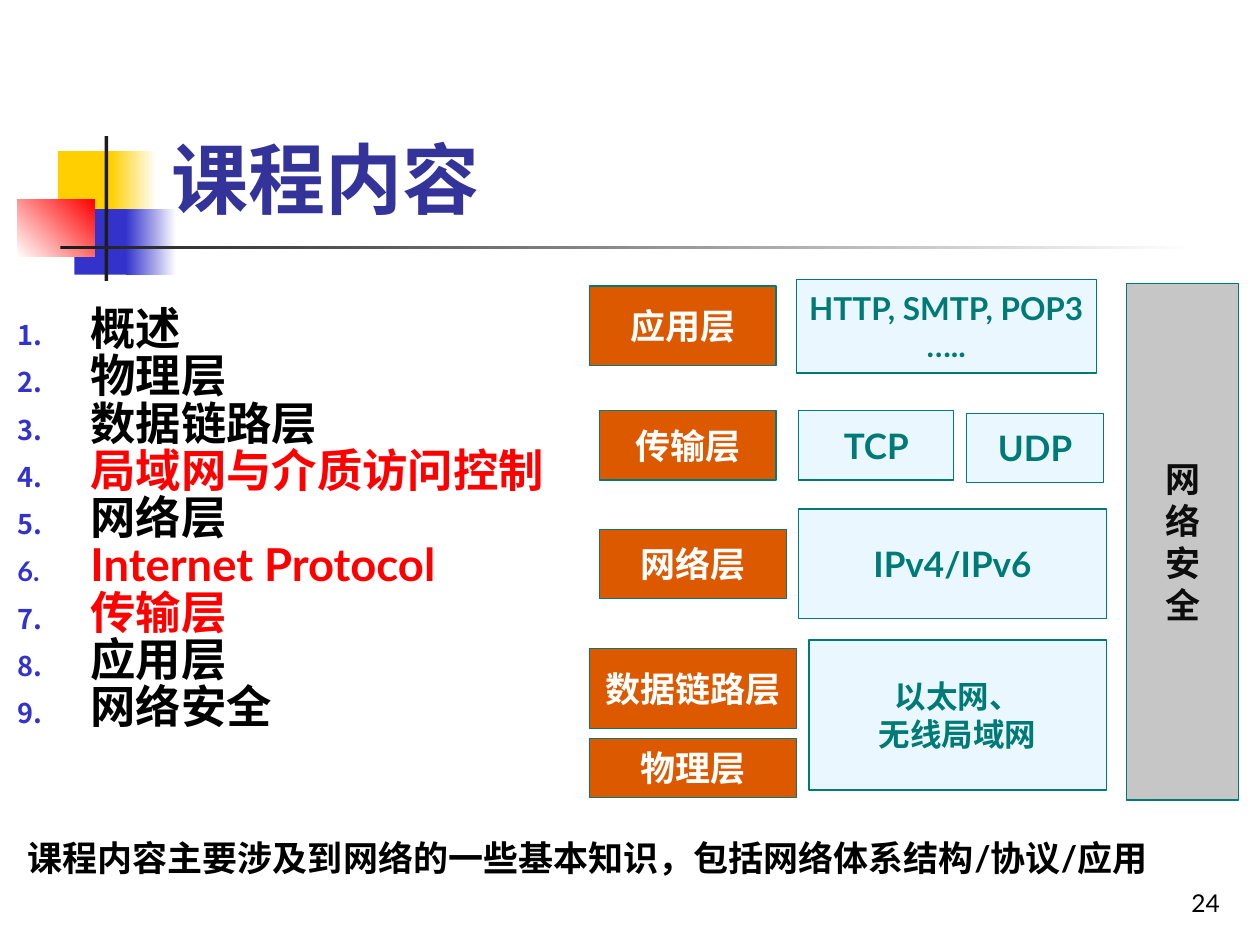
from lxml.etree import SubElement as Sub
from pptx import Presentation
from pptx.dml.color import RGBColor
from pptx.enum.shapes import MSO_SHAPE as Kind
from pptx.enum.text import MSO_ANCHOR as Anchor, PP_ALIGN as Align
from pptx.oxml.ns import qn
from pptx.util import Inches, Pt

FONT = "Lato"
BLUE, RED, BLACK, WHITE = "3333CC", "FF0000", "000000", "FFFFFF"
TEAL, PALE, RUST, GREY = "007A77", "EBF7FF", "DC5900", "C6C6C6"
GOLD, DARK = "FFCF01", "1C1C1C"

TITLE = "课程内容"
TOPICS = ["概述", "物理层", "数据链路层", "局域网与介质访问控制", "网络层",
          "Internet Protocol", "传输层", "应用层", "网络安全"]
HOT = {"局域网与介质访问控制", "Internet Protocol", "传输层"}
NOTE = "课程内容主要涉及到网络的一些基本知识，包括网络体系结构/协议/应用"
PAGE = "24"

DECOR = [
    ((0.46, 1.2, 0.48, 0.52), [GOLD], 0),
    ((0.88, 1.2, 0.36, 0.52), [GOLD, WHITE], 0),
    ((0.59, 1.66, 0.46, 0.52), [BLUE], 0),
    ((1, 1.66, 0.4, 0.52), [BLUE, WHITE], 0),
    ((0.14, 1.58, 0.61, 0.46), [WHITE, RED], 45),
    ((0.83, 1.08, 0.03, 1.15), [DARK], 0),
    ((0.48, 1.95, 9, 0.03), [DARK, WHITE], 0),
]

COL1, COL2, COL3 = 4.68, 6.34, 8.94
STEP = 0.08
ROWS = [2.25, 3.26, 4.04, 5.08]

PROTOS = [
    (["HTTP, SMTP, POP3", "….."], 18, (COL2 - 0.02, ROWS[0] - 0.03, 2.38, 0.74)),
    (["以太网、", "无线局域网"], 18, (COL2 + STEP, ROWS[3], 2.36, 1.19)),
    (["IPv4/IPv6"], 20, (COL2, ROWS[2], 2.44, 0.87)),
    (["TCP"], 20, (COL2, ROWS[1], 1.23, 0.55)),
    (["UDP"], 20, (COL2 + 1.33, ROWS[1] + 0.02, 1.09, 0.55)),
]
LAYERS = [
    (["物理层"], 20, (COL1, ROWS[3] + 0.78, 1.64, 0.47)),
    (["数据链路层"], 20, (COL1, ROWS[3] + 0.07, 1.64, 0.63)),
    (["网络层"], 20, (COL1 + STEP, ROWS[2] + 0.16, 1.48, 0.55)),
    (["传输层"], 20, (COL1 + STEP, ROWS[1], 1.4, 0.55)),
    (["应用层"], 20, (COL1, ROWS[0] + 0.02, 1.48, 0.63)),
]
SAFETY = [(list("网络安全"), 20, (COL3, ROWS[0], 0.89, 4.1))]
GROUPS = [(PROTOS, PALE, TEAL), (LAYERS, RUST, WHITE), (SAFETY, GREY, "0D0D0D")]


def tint(hue):
    return RGBColor.from_string(hue)


def place(box):
    return [Inches(n) for n in box]


def style(para, size, hue, bold=True, align=Align.LEFT):
    para.alignment = align
    font = para.font
    font.name, font.size, font.bold = FONT, Pt(size), bold
    font.color.rgb = tint(hue)


def write(frame, lines, size, hue, bold=True, align=Align.LEFT):
    for i, line in enumerate(lines):
        para = frame.add_paragraph() if i else frame.paragraphs[0]
        para.text = line
        style(para, size, hue, bold, align)


def block(slide, box, hues, angle=0):
    shape = slide.shapes.add_shape(Kind.RECTANGLE, *place(box))
    shape.shadow.inherit = False
    shape.line.fill.background()
    fill = shape.fill
    if len(hues) == 1:
        fill.solid()
        fill.fore_color.rgb = tint(hues[0])
    else:
        fill.gradient()
        fill.gradient_angle = angle
        for stop, hue in zip(fill.gradient_stops, hues):
            stop.color.rgb = tint(hue)
    return shape


def label(slide, box, lines, size, back, hue):
    shape = block(slide, box, [back])
    shape.line.color.rgb = tint(TEAL)
    shape.line.width = Pt(0.75)
    frame = shape.text_frame
    frame.word_wrap = False
    frame.vertical_anchor = Anchor.MIDDLE
    write(frame, lines, size, hue, align=Align.CENTER)


def area(slide, box, anchor=Anchor.TOP):
    frame = slide.shapes.add_textbox(*place(box)).text_frame
    frame.word_wrap = True
    frame.vertical_anchor = anchor
    return frame


def number(para):
    props = para._p.get_or_add_pPr()
    props.set("marL", str(Inches(0.58)))
    props.set("indent", str(-Inches(0.58)))
    Sub(Sub(props, qn("a:buClr")), qn("a:srgbClr"), val=BLUE)
    Sub(props, qn("a:buSzPct"), val="60000")
    Sub(props, qn("a:buFont"), typeface=FONT)
    Sub(props, qn("a:buAutoNum"), type="arabicPeriod")


def topics(slide):
    frame = area(slide, (0.04, 2.39, 4.56, 3.61))
    for i, topic in enumerate(TOPICS):
        para = frame.add_paragraph() if i else frame.paragraphs[0]
        para.text = topic
        number(para)
        para.line_spacing = Pt(27)
        style(para, 25.9, RED if topic in HOT else BLACK)


def main():
    deck = Presentation()
    deck.slide_width, deck.slide_height = Inches(10), Inches(7.5)
    slide = deck.slides.add_slide(deck.slide_layouts[5])
    for box, hues, angle in DECOR:
        block(slide, box, hues, angle)

    title = slide.shapes.title
    title.left, title.top, title.width, title.height = place((1.26, 0.23, 8.52, 1.6))
    title.text_frame.vertical_anchor = Anchor.BOTTOM
    write(title.text_frame, [TITLE], 44, "333399")

    topics(slide)
    for items, back, hue in GROUPS:
        for lines, size, box in items:
            label(slide, box, lines, size, back, hue)

    write(area(slide, (0.12, 6.59, 9.29, 0.44)), [NOTE], 20, BLACK)
    page = area(slide, (7.7, 6.83, 2.08, 0.5), Anchor.BOTTOM)
    write(page, [PAGE], 14, BLACK, False, Align.RIGHT)
    deck.save("out.pptx")


if __name__ == "__main__":
    main()
